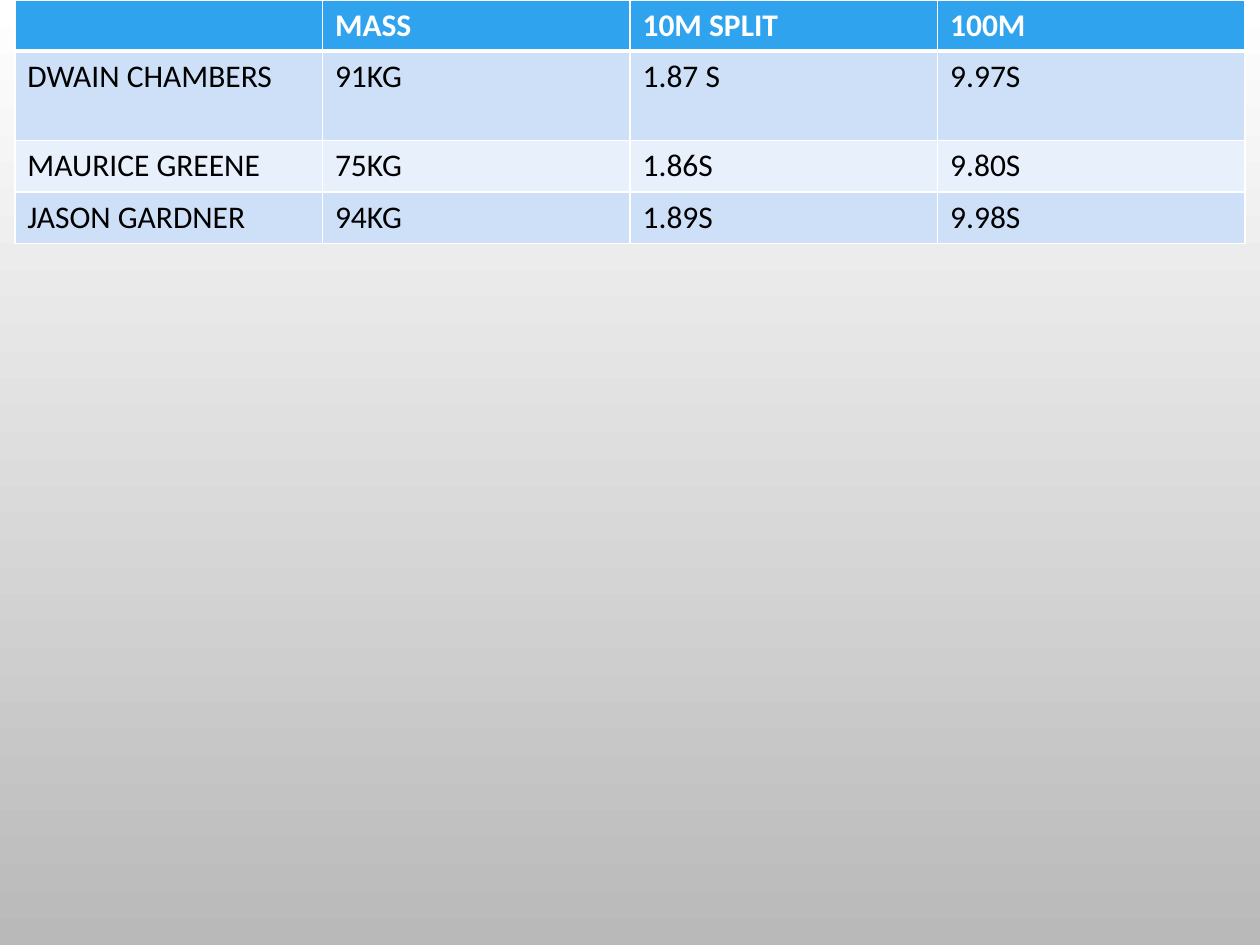
import pptx
import pptx.dml.color
import pptx.oxml.ns
import pptx.util
from lxml import etree
from pptx.util import Cm

ROWS = [
    ("", "MASS", "10M SPLIT", "100M"),
    ("DWAIN CHAMBERS", "91KG", "1.87 S", "9.97S"),
    ("MAURICE GREENE", "75KG", "1.86S", "9.80S"),
    ("JASON GARDNER", "94KG", "1.89S", "9.98S"),
]
HEIGHTS = [1.02, 1.8, 1.04, 1.04]
LEFT, TOP, WIDTH = 0.3, 0, 24.8

THEME = {
    "font": "Calibri",
    "size": 18,
    "back": ("FFFFFF", "B9B9B9"),
    "head": "2FA3EE",
    "bands": ("CDE0F8", "E8F0FC"),
    "light": "FFFFFF",
    "dark": "000000",
    "rule": 1,
    "thick": 3,
}


def color(name):
    """Turn a hex string into a colour."""
    return pptx.dml.color.RGBColor.from_string(name)


def border(cell, side, width):
    """Draw one side of a cell as a solid line."""
    qn = pptx.oxml.ns.qn
    props = cell._tc.get_or_add_tcPr()
    line = etree.SubElement(props, qn(f"a:ln{side}"), w=str(pptx.util.Pt(width)))
    fill = etree.SubElement(line, qn("a:solidFill"))
    etree.SubElement(fill, qn("a:srgbClr"), val=THEME["light"])


def style(cell, text, row):
    """Fill, rule and write one cell."""
    head = row == 0
    thick = {"T": row == 1, "B": head}
    for side in "LRTB":
        border(cell, side, THEME["thick" if thick.get(side) else "rule"])
    cell.fill.solid()
    shade = THEME["head"] if head else THEME["bands"][(row - 1) % 2]
    cell.fill.fore_color.rgb = color(shade)
    para = cell.text_frame.paragraphs[0]
    para.font.size = pptx.util.Pt(THEME["size"])
    if text:
        run = para.add_run()
        run.text = text
        run.font.name = THEME["font"]
        run.font.size = pptx.util.Pt(THEME["size"])
        run.font.bold = head
        run.font.color.rgb = color(THEME["light" if head else "dark"])


def main():
    """Build the sprint table slide."""
    deck = pptx.Presentation()
    deck.slide_width, deck.slide_height = Cm(25.4), Cm(19.05)
    slide = deck.slides.add_slide(deck.slide_layouts[6])

    back = slide.background.fill
    back.gradient()
    back.gradient_angle = 270
    for stop, shade in zip(back.gradient_stops, THEME["back"]):
        stop.color.rgb = color(shade)

    count = len(ROWS[0])
    table = slide.shapes.add_table(
        len(ROWS), count, Cm(LEFT), Cm(TOP), Cm(WIDTH), Cm(sum(HEIGHTS))
    ).table
    for col in table.columns:
        col.width = Cm(WIDTH / count)
    for r, (texts, high) in enumerate(zip(ROWS, HEIGHTS)):
        table.rows[r].height = Cm(high)
        for c, text in enumerate(texts):
            style(table.cell(r, c), text, r)

    deck.save("out.pptx")


if __name__ == "__main__":
    main()
